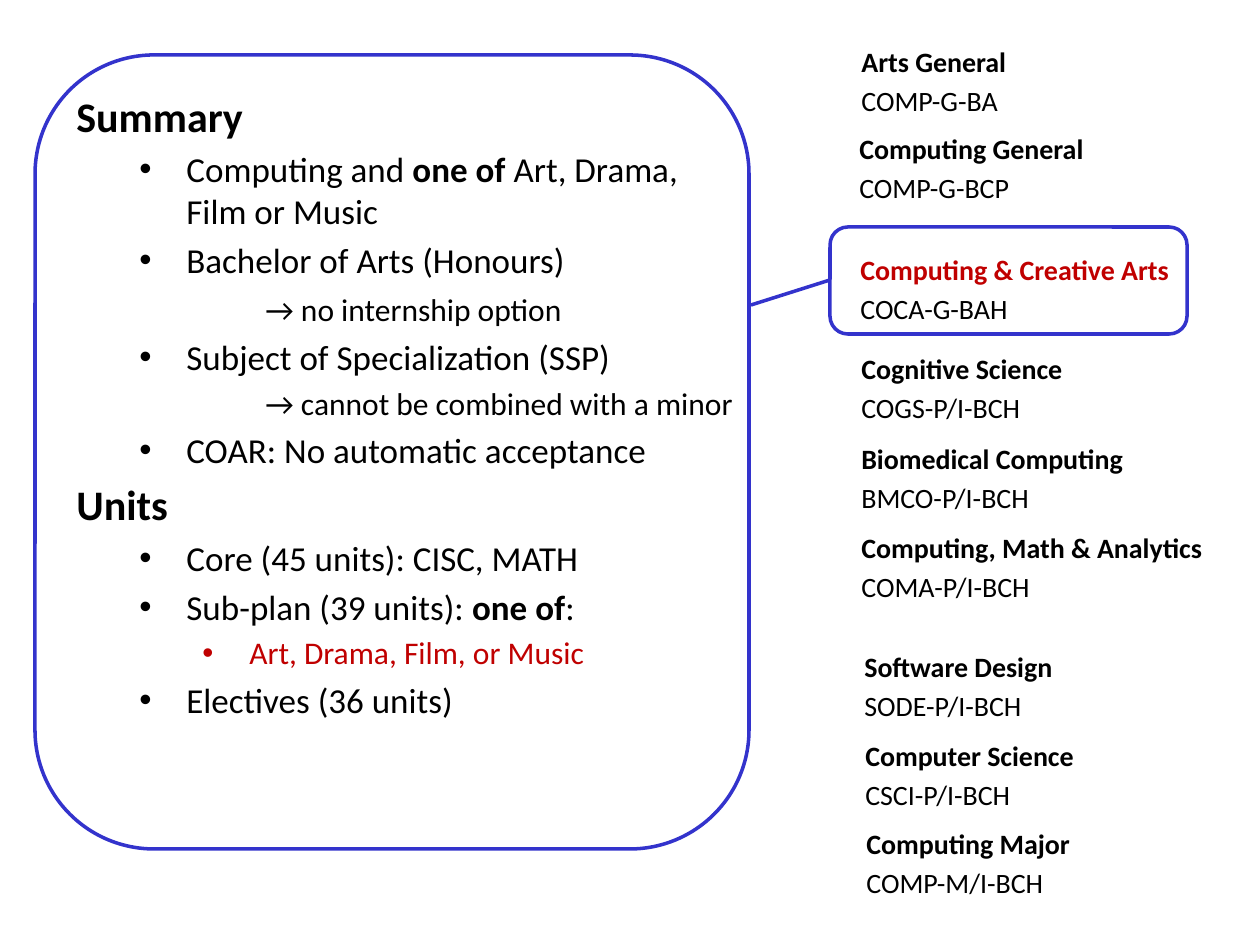
from pptx import Presentation
from pptx.dml.color import RGBColor
from pptx.enum.shapes import MSO_CONNECTOR, MSO_SHAPE
from pptx.enum.text import MSO_AUTO_SIZE
from pptx.oxml.ns import qn
from pptx.util import Pt
from lxml.etree import SubElement

PX = 914400 / 126
FACE = "Calibri"
HEX = {"text": "000000", "accent": "C00000", "frame": "3333CC"}

# Content: (kind, runs, extra space before in pt); every second run is bold
SUMMARY = [
    ("head", ["", "Summary"], 0),
    ("item", ["Computing and ", "one of ", "Art, Drama, Film or Music"], 0),
    ("item", ["Bachelor of Arts (Honours)"], 0),
    ("note", ["→ no internship option"], 2),
    ("item", ["Subject of Specialization (SSP)"], 0),
    ("note", ["→ cannot be combined with a minor"], 0),
    ("item", ["COAR: No automatic acceptance"], 0),
    ("head", ["", "Units"], 0),
    ("item", ["Core (45 units): CISC, MATH"], 0),
    ("item", ["Sub-plan (39 units): ", "one of", ":"], 0),
    ("sub", ["Art, Drama, Film, or Music"], 0),
    ("item", ["Electives (36 units)"], 0),
]

# Name, code, left, top, width, name colour
PROGRAMS = [
    ("Arts General", "COMP-G-BA", 849, 38, 173, "text"),
    ("Computing General", "COMP-G-BCP", 847, 125, 253, "text"),
    ("Computing & Creative Arts", "COCA-G-BAH", 848, 246, 339, "accent"),
    ("Cognitive Science", "COGS-P/I-BCH", 849, 345, 229, "text"),
    ("Biomedical Computing", "BMCO-P/I-BCH", 849, 435, 291, "text"),
    ("Computing, Math & Analytics", "COMA-P/I-BCH", 849, 524, 372, "text"),
    ("Software Design", "SODE-P/I-BCH", 852, 643, 217, "text"),
    ("Computer Science", "CSCI-P/I-BCH", 853, 732, 237, "text"),
    ("Computing Major", "COMP-M/I-BCH", 854, 820, 232, "text"),
]

# Paragraph kinds: level, text size, left margin px, hanging px, colour
KINDS = {
    "head": (0, 24, 0, 0, "text"),
    "item": (1, 20, 110, 47, "text"),
    "note": (1, 18, 189, 0, "text"),
    "sub": (2, 18, 173, 47, "accent"),
}
FRAMES = [(35, 55, 714, 794), (830, 227, 357, 107)]
LINK = (751, 305, 830, 280)


def px(*vals):
    return [round(v * PX) for v in vals]


def ink(key):
    return RGBColor.from_string(HEX[key])


def add_box(area, wrap):
    frame = slide.shapes.add_textbox(*px(*area)).text_frame
    frame.word_wrap = wrap
    frame.auto_size = MSO_AUTO_SIZE.SHAPE_TO_FIT_TEXT
    return frame


def add_para(frame, first, size, extra=0):
    para = frame.paragraphs[0] if first else frame.add_paragraph()
    para.space_before = Pt(0 if first else size * 0.2 + extra)
    return para


def add_run(para, text, size, bold, key):
    run = para.add_run()
    run.text = text
    for name, val in {"name": FACE, "size": Pt(size), "bold": bold}.items():
        setattr(run.font, name, val)
    run.font.color.rgb = ink(key)


def indent(para, left, hang):
    props = para._p.get_or_add_pPr()
    for name, val in zip(("marL", "indent"), px(left, -hang)):
        props.set(name, str(val))
    if hang:
        SubElement(props, qn("a:buFont")).set("typeface", "Arial")
        SubElement(props, qn("a:buChar")).set("char", "•")


def set_line(shape):
    shape.line.color.rgb = ink("frame")
    shape.line.width = Pt(2)


deck = Presentation()
deck.slide_width, deck.slide_height = px(1260, 945)
slide = deck.slides.add_slide(deck.slide_layouts[6])

# Summary text
frame = add_box((64, 84, 685, 665), True)
for i, (kind, runs, extra) in enumerate(SUMMARY):
    level, size, left, hang, key = KINDS[kind]
    para = add_para(frame, i == 0, size, extra)
    para.level = level
    indent(para, left, hang)
    for j, text in enumerate(runs):
        if text:
            add_run(para, text, size, j % 2 == 1, key)

# Program list
for name, code, left, top, width, key in PROGRAMS:
    frame = add_box((left, top, width, 87), False)
    add_run(add_para(frame, True, 16), name, 16, True, key)
    add_run(add_para(frame, False, 16), code, 16, False, "text")

# Frames around the summary and the chosen program
for area in FRAMES:
    shape = slide.shapes.add_shape(MSO_SHAPE.ROUNDED_RECTANGLE, *px(*area))
    shape.shadow.inherit = False
    shape.fill.background()
    set_line(shape)

# Link between the frames
link = slide.shapes.add_connector(MSO_CONNECTOR.STRAIGHT, *px(*LINK))
set_line(link)
SubElement(link._element.spPr, qn("a:effectLst"))

deck.save("out.pptx")
